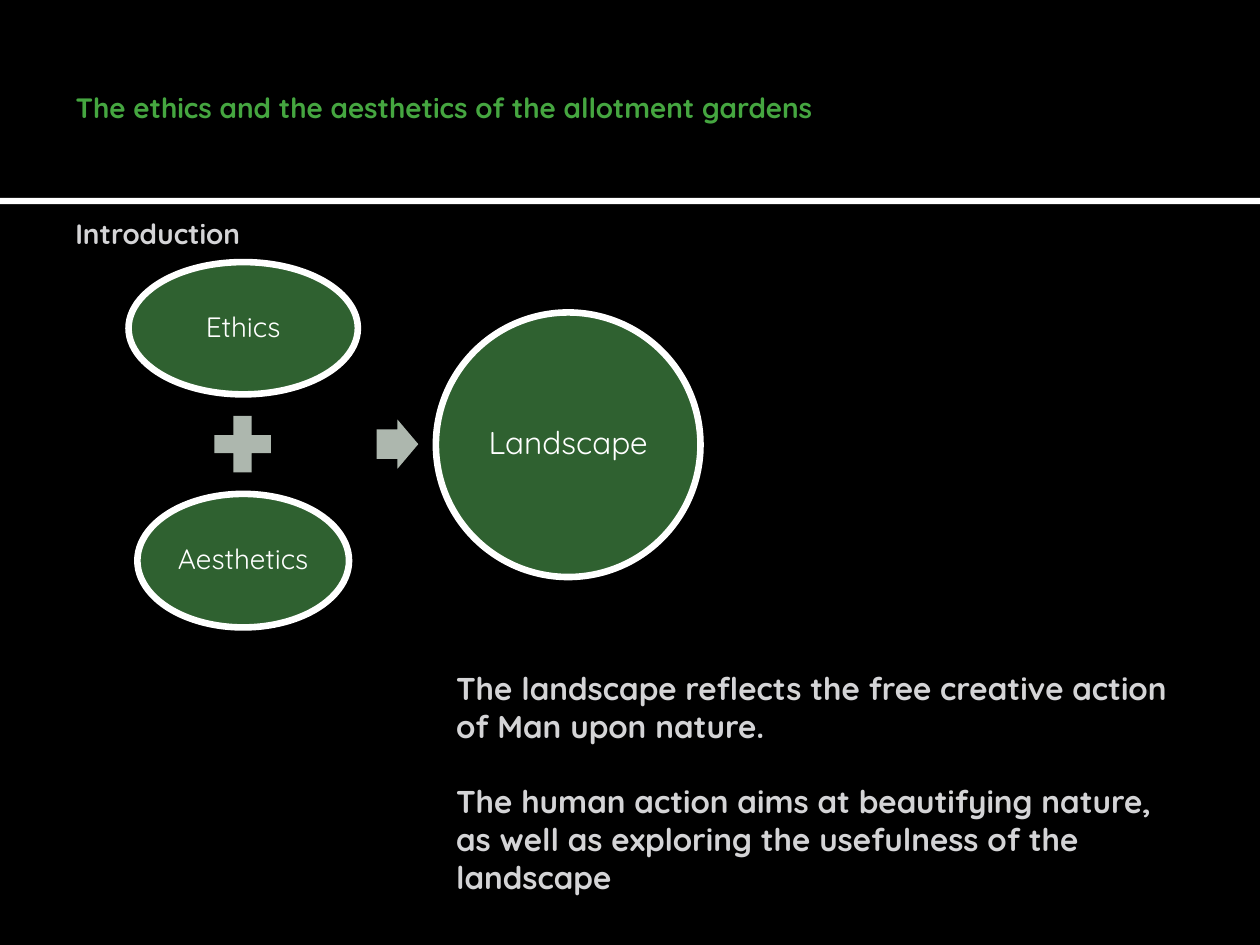
from dataclasses import dataclass

from pptx import Presentation
from pptx.dml.color import RGBColor
from pptx.enum.shapes import MSO_SHAPE
from pptx.enum.text import MSO_ANCHOR, PP_ALIGN
from pptx.util import Inches, Pt

BLACK = RGBColor(0x00, 0x00, 0x00)
WHITE = RGBColor(0xFF, 0xFF, 0xFF)
TITLE_GREEN = RGBColor(0x45, 0xA6, 0x40)
DARK_GREEN = RGBColor(0x2F, 0x61, 0x30)
GREY_GREEN = RGBColor(0xAD, 0xB7, 0xAE)
LIGHT_GREY = RGBColor(0xD4, 0xD4, 0xD6)
FONT = "Quicksand"


@dataclass
class Area:
    left: float
    top: float
    width: float
    height: float

    def lengths(self) -> list:
        return [Inches(v) for v in (self.left, self.top, self.width, self.height)]


@dataclass
class Concept:
    text: str
    area: Area
    size: int


CONCEPTS = [
    Concept("Ethics", Area(1.02, 2.08, 1.82, 1.05), 16),
    Concept("Aesthetics", Area(1.09, 3.92, 1.68, 1.06), 16),
    Concept("Landscape", Area(3.46, 2.48, 2.1, 2.1), 18),
]
STATEMENTS = [
    "The landscape reflects the free creative action of Man upon nature.",
    "The human action aims at beautifying nature, as well as exploring "
    "the usefulness of the landscape",
]


def style_font(para, size: int, color: RGBColor, bold: bool = False) -> None:
    font = para.font
    font.name = FONT
    font.size = Pt(size)
    font.bold = bold
    font.color.rgb = color


def set_margins(frame, left: float, top: float, right: float, bottom: float) -> None:
    frame.margin_left, frame.margin_top = Inches(left), Inches(top)
    frame.margin_right, frame.margin_bottom = Inches(right), Inches(bottom)


def add_filled(page, kind: MSO_SHAPE, area: Area, color: RGBColor):
    shape = page.shapes.add_shape(kind, *area.lengths())
    shape.shadow.inherit = False
    shape.fill.solid()
    shape.fill.fore_color.rgb = color
    shape.line.fill.background()
    return shape


def add_concept(page, concept: Concept) -> None:
    oval = add_filled(page, MSO_SHAPE.OVAL, concept.area, DARK_GREEN)
    oval.line.color.rgb = WHITE
    oval.line.width = Pt(3.78)
    frame = oval.text_frame
    set_margins(frame, 0.02, 0.02, 0.02, 0.02)
    frame.word_wrap = True
    frame.vertical_anchor = MSO_ANCHOR.MIDDLE
    para = frame.paragraphs[0]
    para.text = concept.text
    para.alignment = PP_ALIGN.CENTER
    para.line_spacing = 0.9
    style_font(para, concept.size, WHITE)


def add_text(page, area: Area):
    frame = page.shapes.add_textbox(*area.lengths()).text_frame
    frame.word_wrap = True
    return frame


def main() -> None:
    deck = Presentation()
    deck.slide_width, deck.slide_height = Inches(10), Inches(7.5)
    page = deck.slides.add_slide(deck.slide_layouts[5])
    page.background.fill.solid()
    page.background.fill.fore_color.rgb = BLACK

    # Title and the rule below it
    title = page.shapes.title
    title.left, title.top, title.width, title.height = Area(0.5, 0.17, 9, 1.37).lengths()
    frame = title.text_frame
    set_margins(frame, 0.1, 0.05, 0.05, 0.05)
    frame.vertical_anchor = MSO_ANCHOR.MIDDLE
    para = frame.paragraphs[0]
    para.text = "The ethics and the aesthetics of the allotment gardens"
    para.alignment = PP_ALIGN.LEFT
    style_font(para, 16, TITLE_GREEN, bold=True)
    add_filled(page, MSO_SHAPE.RECTANGLE, Area(0, 1.57, 10, 0.05), WHITE)

    # Section heading
    para = add_text(page, Area(0.5, 1.67, 5.67, 0.37)).paragraphs[0]
    para.text = "Introduction"
    style_font(para, 16, LIGHT_GREY, bold=True)

    # Diagram: ethics plus aesthetics gives landscape
    for concept in CONCEPTS:
        add_concept(page, concept)
    add_filled(page, MSO_SHAPE.MATH_PLUS, Area(1.62, 3.22, 0.61, 0.61), GREY_GREEN)
    arrow = add_filled(page, MSO_SHAPE.RIGHT_ARROW, Area(2.99, 3.33, 0.33, 0.39), GREY_GREEN)
    arrow.adjustments[0] = 0.6

    # Statements, one line apart
    frame = add_text(page, Area(3.56, 5.31, 6, 1.68))
    set_margins(frame, 0.06, 0, 0.1, 0)
    for index, statement in enumerate(STATEMENTS):
        para = frame.add_paragraph() if index else frame.paragraphs[0]
        para.text = statement
        para.line_spacing = Pt(21.6)
        para.space_before = Pt(21.6 if index else 0)
        style_font(para, 18, LIGHT_GREY, bold=True)

    deck.save("out.pptx")


if __name__ == "__main__":
    main()
